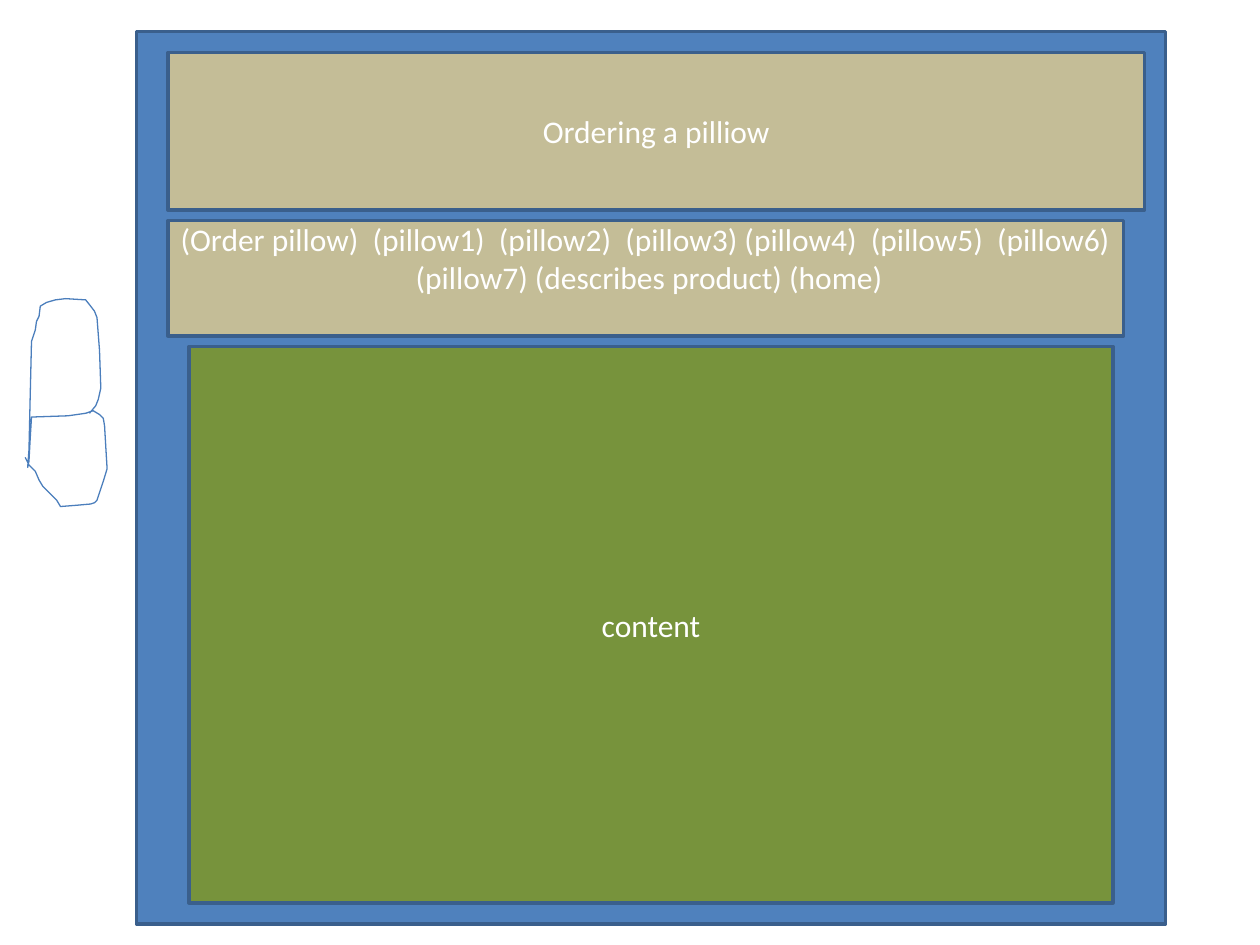
"""Build a page layout wireframe for a pillow order site."""
from dataclasses import dataclass

from pptx import Presentation
from pptx.dml.color import RGBColor as Rgb
from pptx.enum.shapes import MSO_SHAPE as Kind
from pptx.enum.text import MSO_ANCHOR as Anchor, PP_ALIGN as Align
from pptx.util import Inches, Pt


@dataclass(frozen=True)
class Theme:
    page: str = "4F81BD"
    band: str = "C4BD97"
    body: str = "77933C"
    edge: str = "3A5F8C"
    ink: str = "4B7EBC"
    text: str = "FFFFFF"
    font: str = "Calibri"
    size: int = 18
    rule: float = 2
    thin: float = 0.75


look = Theme()
deck = Presentation()
deck.slide_width, deck.slide_height = Inches(10), Inches(7.5)
col, row = deck.slide_width // 120, deck.slide_height // 90
slide = deck.slides.add_slide(deck.slide_layouts[6])

menu = ("(Order pillow)  (pillow1)  (pillow2)  (pillow3) (pillow4)  (pillow5)  "
        "(pillow6)  (pillow7) (describes product) (home)")
panels = [
    (13, 3, 98, 85, look.page, "", Anchor.MIDDLE),
    (16, 5, 93, 15, look.band, "Ordering a pilliow", Anchor.MIDDLE),
    (16, 21, 91, 11, look.band, menu, Anchor.TOP),
    (18, 33, 88, 53, look.body, "content", Anchor.MIDDLE),
]
for left, top, wide, high, fill, words, anchor in panels:
    box = slide.shapes.add_shape(
        Kind.RECTANGLE, left * col, top * row, wide * col, high * row)
    box.shadow.inherit = False
    box.fill.solid()
    box.fill.fore_color.rgb = Rgb.from_string(fill)
    box.line.color.rgb = Rgb.from_string(look.edge)
    box.line.width = Pt(look.rule)
    if not words:
        continue
    frame = box.text_frame
    frame.word_wrap = True
    frame.vertical_anchor = anchor
    if anchor == Anchor.TOP:
        frame.margin_top = 0
    para = frame.paragraphs[0]
    para.alignment = Align.CENTER
    run = para.add_run()
    run.text = words
    run.font.name = look.font
    run.font.size = Pt(look.size)
    run.font.color.rgb = Rgb.from_string(look.text)

doodle = [
    (20, 363), (23, 369), (28, 374), (31, 381), (34, 386), (42, 394),
    (45, 397), (48, 402), (61, 401), (72, 400), (75, 399), (77, 397),
    (79, 391), (82, 382), (85, 372), (84, 355), (83, 338), (82, 332),
    (79, 329), (74, 326), (68, 328), (54, 330), (25, 331), (24, 348),
    (23, 366), (22, 371), (23, 357), (24, 314), (25, 271), (28, 262),
    (29, 255), (31, 251), (32, 243), (37, 240), (44, 238), (52, 237),
    (68, 238), (72, 243), (75, 247), (77, 252), (79, 278), (80, 308),
    (78, 317), (76, 322), (71, 328),
]
pen = slide.shapes.build_freeform(*doodle[0], scale=Inches(0.01))
pen.add_line_segments(doodle[1:], close=False)
sketch = pen.convert_to_shape()
sketch.shadow.inherit = False
sketch.fill.background()
sketch.line.color.rgb = Rgb.from_string(look.ink)
sketch.line.width = Pt(look.thin)

deck.save("out.pptx")
